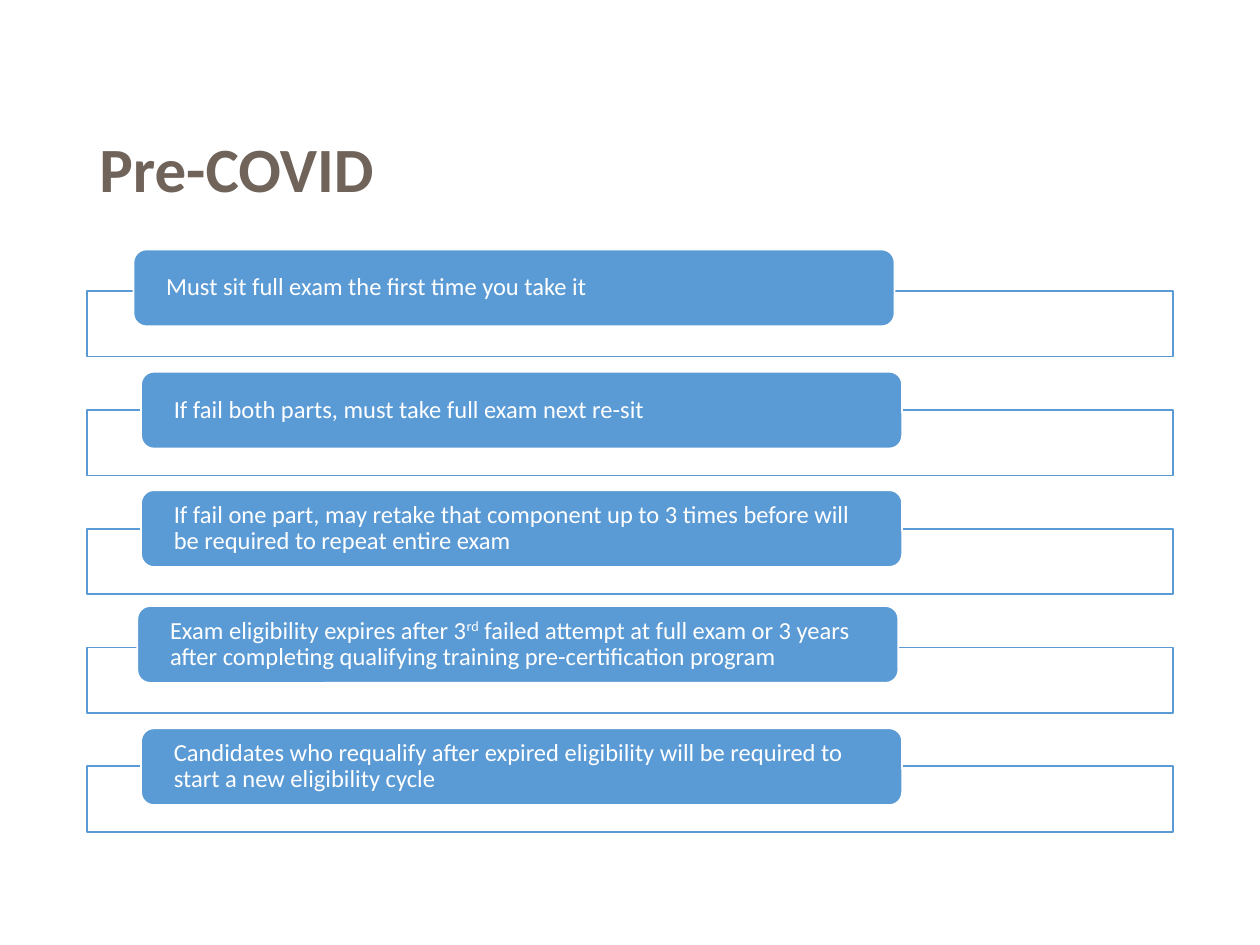
from pptx import Presentation
from pptx.dml.color import RGBColor
from pptx.enum.shapes import MSO_SHAPE
from pptx.enum.text import MSO_ANCHOR, PP_ALIGN
from pptx.util import Inches, Pt

RECTANGLE = MSO_SHAPE.RECTANGLE
ROUNDED = MSO_SHAPE.ROUNDED_RECTANGLE
MIDDLE = MSO_ANCHOR.MIDDLE
LEFT = PP_ALIGN.LEFT
BLUE, WHITE, BROWN = "5B9BD5", "FFFFFF", "706359"


def color(value):
    return RGBColor.from_string(value)


def add_box(kind, left, top, width, height, fill, line):
    box = page.shapes.add_shape(kind, Inches(left), Inches(top), Inches(width), Inches(height))
    box.shadow.inherit = False
    box.fill.solid()
    box.fill.fore_color.rgb = color(fill)
    box.line.color.rgb = color(line)
    box.line.width = Pt(1)
    return box


deck = Presentation()
deck.slide_width = Inches(10)
deck.slide_height = Inches(7.5)
page = deck.slides.add_slide(deck.slide_layouts[6])

title = page.shapes.add_textbox(Inches(0.69), Inches(0.89), Inches(8.62), Inches(0.96))
title.text_frame.word_wrap = True
title.text_frame.vertical_anchor = MIDDLE
title.text_frame.text = "Pre-COVID"
para = title.text_frame.paragraphs[0]
para.line_spacing = 0.9
span = para.runs[0]
span.font.name = "Calibri"
span.font.size = Pt(36)
span.font.bold = True
span.font.color.rgb = color(BROWN)

rules = [
    (1.06, 1.98, ["Must sit full exam the first time you take it"]),
    (1.12, 2.95, ["If fail both parts, must take full exam next re-sit"]),
    (1.12, 3.89, ["If fail one part, may retake that component up to 3 times before will "
                  "be required to repeat entire exam"]),
    (1.09, 4.81, ["Exam eligibility expires after 3", "rd",
                  " failed attempt at full exam or 3 years after completing qualifying "
                  "training pre-certification program"]),
    (1.12, 5.78, ["Candidates who requalify after expired eligibility will be required to "
                  "start a new eligibility cycle"]),
]

for index, (left, top, parts) in enumerate(rules):
    add_box(RECTANGLE, 0.69, 2.31 + index * 0.943, 8.62, 0.52, WHITE, BLUE)
    label = add_box(ROUNDED, left, top, 6.04, 0.61, BLUE, WHITE)
    frame = label.text_frame
    frame.word_wrap = True
    frame.vertical_anchor = MIDDLE
    frame.margin_left = frame.margin_right = Inches(0.23)
    frame.margin_top = frame.margin_bottom = 0
    para = frame.paragraphs[0]
    para.alignment = LEFT
    para.line_spacing = 0.9
    for part in parts:
        span = para.add_run()
        span.text = part
        span.font.name = "Calibri"
        span.font.size = Pt(14)
        span.font.color.rgb = color(WHITE)
        if part == "rd":
            span._r.get_or_add_rPr().set("baseline", "30000")

deck.save("out.pptx")
